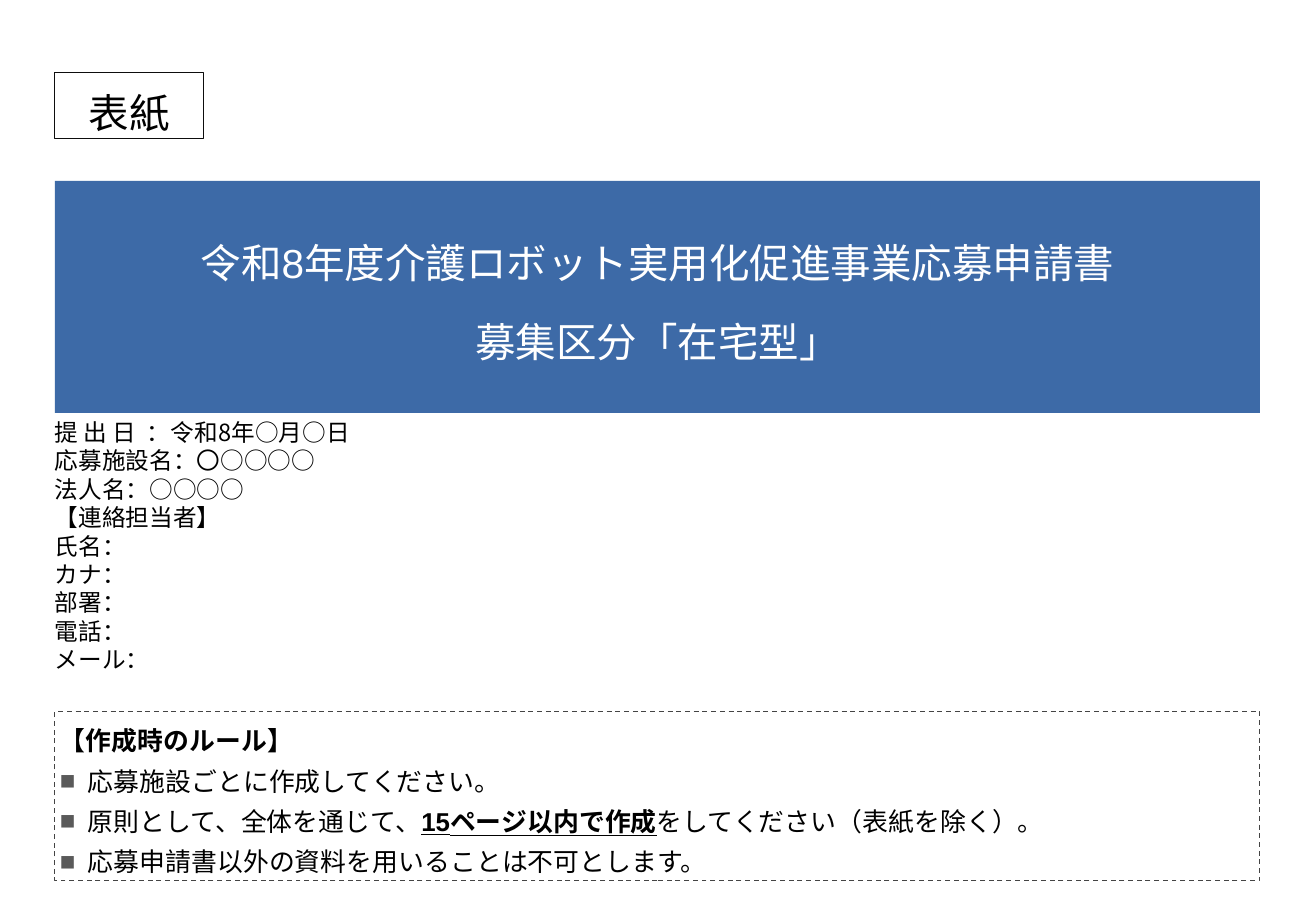
from lxml import etree
from pptx import Presentation
from pptx.dml.color import RGBColor
from pptx.enum import dml, shapes, text
from pptx.oxml.ns import qn
from pptx.util import Pt

# Content: each paragraph is a list of (words, emphasised) spans
COVER_LABEL = [[("表紙", False)]]
TITLE = [
    [("令和8年度介護ロボット実用化促進事業応募申請書", False)],
    [("募集区分「在宅型」", False)],
]
APPLICANT = [
    [(line, False)] for line in (
        "提 出 日  ：令和8年○月○日", "応募施設名：〇○○○○", "法人名：○○○○",
        "【連絡担当者】", "氏名：", "カナ：", "部署：", "電話：", "メール：",
    )
]
RULES_HEADING = [("【作成時のルール】", False)]
RULES = [
    [("応募施設ごとに作成してください。", False)],
    [("原則として、全体を通じて、", False), ("15ページ以内で作成", True),
     ("をしてください（表紙を除く）。", False)],
    [("応募申請書以外の資料を用いることは不可とします。", False)],
]

THEME = {
    "black": "000000", "white": "FFFFFF", "blue": "3D6AA7",
    "frame": "0D0D0D", "dash": "444444", "bullet": "5A5A5A",
    "latin": "Arial", "japanese": "Noto Sans CJK JP",
    "title": 24, "rules": 15.3, "applicant": 14,
}

# Layout in points
PAGE_WIDTH, PAGE_HEIGHT = 780, 540
LEFT = 32.5
WIDTH = PAGE_WIDTH - 2 * LEFT - 0.75
TITLE_TOP, TITLE_HEIGHT = 107.25, 137.5


def color(name):
    return RGBColor.from_string(THEME[name])


def add_box(page, top, width, height, fill=None, line=None, dashed=False):
    box = page.shapes.add_shape(
        shapes.MSO_SHAPE.RECTANGLE, Pt(LEFT), Pt(top), Pt(width), Pt(height))
    box.shadow.inherit = False
    if fill:
        box.fill.solid()
        box.fill.fore_color.rgb = color(fill)
    else:
        box.fill.background()
    if line:
        box.line.color.rgb = color(line)
        box.line.width = Pt(0.75)
        if dashed:
            box.line.dash_style = dml.MSO_LINE.DASH
    else:
        box.line.fill.background()
    return box


def set_frame(box, margins, anchor=text.MSO_ANCHOR.TOP, wrap=True, grow=False):
    frame = box.text_frame
    (frame.margin_left, frame.margin_top,
     frame.margin_right, frame.margin_bottom) = map(Pt, margins)
    frame.vertical_anchor = anchor
    frame.word_wrap = wrap
    frame.auto_size = (text.MSO_AUTO_SIZE.SHAPE_TO_FIT_TEXT if grow
                       else text.MSO_AUTO_SIZE.NONE)


def write(box, paragraphs, size, font="latin", ink="black", bold=False,
          align=text.PP_ALIGN.LEFT, spacing=1.0, before=0, hanging=0,
          bullet=None, append=False):
    frame = box.text_frame
    for index, spans in enumerate(paragraphs):
        first = index == 0 and not append
        para = frame.paragraphs[0] if first else frame.add_paragraph()
        para.alignment = align
        para.line_spacing = spacing
        para.space_before = Pt(0 if first else before)
        properties = para._p.get_or_add_pPr()
        if hanging:
            properties.set("marL", str(Pt(hanging)))
            properties.set("indent", str(-Pt(hanging)))
        if bullet:
            tint = etree.SubElement(properties, qn("a:buClr"))
            etree.SubElement(tint, qn("a:srgbClr"), val=THEME["bullet"])
            etree.SubElement(properties, qn("a:buFont"), typeface=THEME["latin"])
            etree.SubElement(properties, qn("a:buChar"), char=bullet)
        for words, emphasised in spans:
            span = para.add_run()
            span.text = words
            span.font.size = Pt(THEME[size])
            span.font.name = THEME[font]
            span.font.color.rgb = color(ink)
            span.font.bold = bold or emphasised
            span.font.underline = emphasised
            latin = span.font._element.find(qn("a:latin"))
            latin.addnext(etree.Element(qn("a:ea"), typeface=THEME["japanese"]))


def main():
    deck = Presentation()
    deck.slide_width, deck.slide_height = Pt(PAGE_WIDTH), Pt(PAGE_HEIGHT)
    page = deck.slides.add_slide(deck.slide_layouts[6])
    heading = {"align": text.PP_ALIGN.CENTER, "spacing": 1.2, "before": 12}

    # Applicant details
    details = page.shapes.add_textbox(
        Pt(LEFT), Pt(TITLE_TOP + TITLE_HEIGHT), Pt(WIDTH), Pt(159))
    set_frame(details, (0, 3, 0, 3.5), grow=True)
    write(details, APPLICANT, "applicant", font="japanese", hanging=21)

    # Rules for filling in the form
    rules = add_box(page, 422, WIDTH, 100, line="dash", dashed=True)
    set_frame(rules, (3, 3, 3, 3), anchor=text.MSO_ANCHOR.MIDDLE)
    write(rules, [RULES_HEADING], "rules", bold=True, spacing=1.3)
    write(rules, RULES, "rules", spacing=1.3, hanging=16.5, bullet="■",
          append=True)

    # Cover label
    label = add_box(page, 43, 88, 39, line="frame")
    set_frame(label, (7.2, 3.6, 7.2, 3.6), grow=True)
    write(label, COVER_LABEL, "title", **heading)

    # Title band
    band = add_box(page, TITLE_TOP, WIDTH, TITLE_HEIGHT, fill="blue")
    set_frame(band, (1.5,) * 4, anchor=text.MSO_ANCHOR.MIDDLE, wrap=False)
    write(band, TITLE, "title", ink="white", **heading)

    deck.save("out.pptx")


if __name__ == "__main__":
    main()
